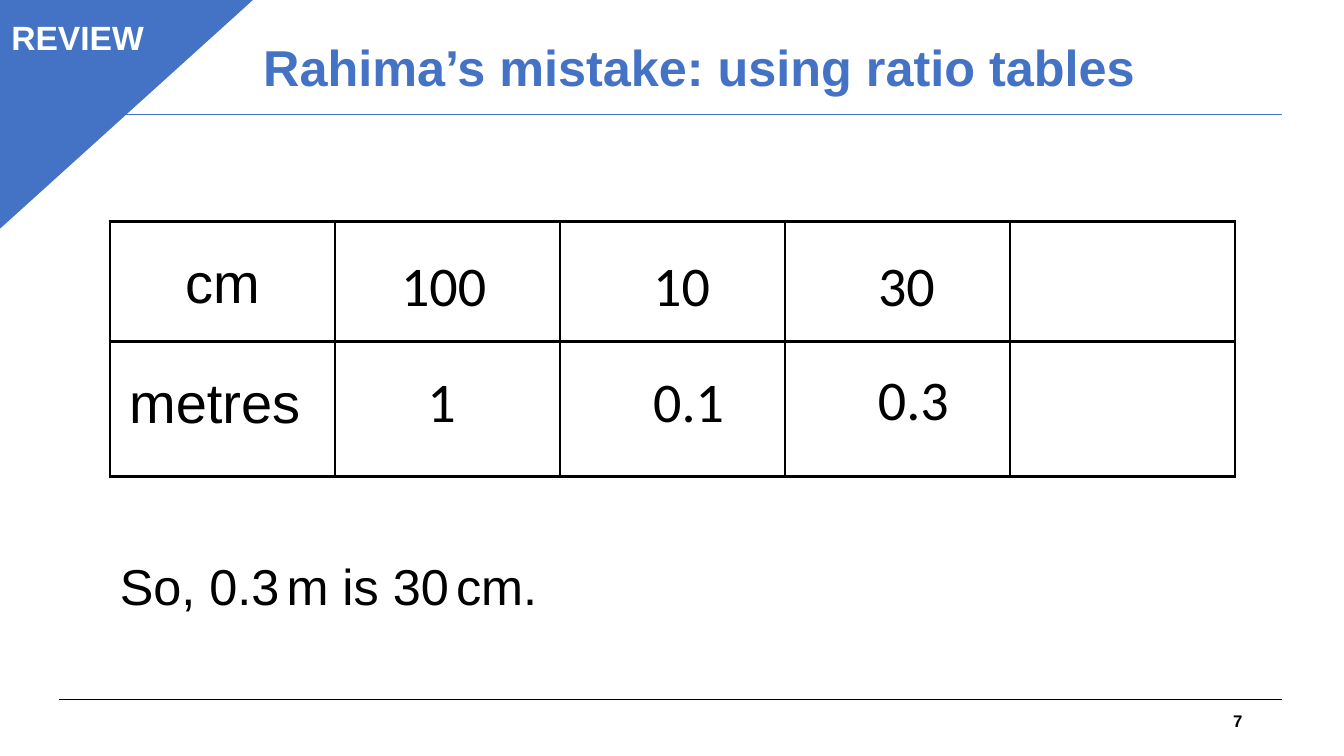
import pptx
import pptx.util
import pptx.dml.color
import pptx.enum.shapes
import pptx.enum.text
import pptx.oxml
import pptx.oxml.ns
from dataclasses import dataclass

Inches = pptx.util.Inches
Pt = pptx.util.Pt
Align = pptx.enum.text.PP_ALIGN
Anchor = pptx.enum.text.MSO_ANCHOR
Shape = pptx.enum.shapes.MSO_SHAPE


@dataclass(frozen=True)
class Theme:
    accent: str = "4472C4"
    ink: str = "000000"
    paper: str = "FFFFFF"
    text_font: str = "Arial"
    number_font: str = "Calibri"
    table_size: int = 40
    title_size: int = 36
    tag_size: int = 24
    gap_size: int = 18
    page_size: int = 12
    rule: float = 0.75
    border: float = 2.25


THEME = Theme()
TITLE = "Rahima’s mistake: using ratio tables"
TAG = "REVIEW"
PAGE = "7"
UNITS = ["cm", "metres "]
RATIOS = [
    ("100", 3.88, 2.44, 1.1),
    ("1", 4.14, 3.59, 0.58),
    ("10", 6.38, 2.44, 0.79),
    ("0.1", 6.38, 3.59, 0.95),
    ("30", 8.61, 2.44, 0.79),
    ("0.3", 8.61, 3.57, 1.07),
]
CONCLUSION = ["So, 0.3", "m is 30", "cm."]
TABLE_BOX = (1.09, 2.2, 11.16, 2.53)
ROW_HEIGHTS = [1.19, 1.34]
COLUMNS = 5
RULES = [(1.14, THEME.accent), (6.94, THEME.ink)]


def rgb(color):
    return pptx.dml.color.RGBColor.from_string(color)


def inches(box):
    return [Inches(v) for v in box]


def add_run(p, text, size, color=THEME.ink, font=THEME.text_font, bold=False):
    r = p.add_run()
    r.text = text
    r.font.size = Pt(size)
    r.font.name = font
    r.font.bold = bold
    r.font.color.rgb = rgb(color)


def add_text_box(s, box):
    tf = s.shapes.add_textbox(*inches(box)).text_frame
    tf.word_wrap = True
    return tf


def add_block(s, kind, box, width):
    sp = s.shapes.add_shape(kind, *inches(box))
    sp.shadow.inherit = False
    sp.fill.solid()
    sp.fill.fore_color.rgb = rgb(THEME.accent)
    sp.line.color.rgb = rgb(THEME.accent)
    sp.line.width = Pt(width)
    return sp


def add_rule(s, y, color):
    ln = s.shapes.add_connector(
        pptx.enum.shapes.MSO_CONNECTOR.STRAIGHT, *inches((0.59, y, 12.72, y)))
    ln.line.color.rgb = rgb(color)
    ln.line.width = Pt(THEME.rule)
    pptx.oxml.ns.qn("a:effectLst")
    ln._element.spPr.append(pptx.oxml.parse_xml(
        f'<a:effectLst {pptx.oxml.ns.nsdecls("a")}/>'))


def set_borders(cell):
    tc_pr = cell._tc.get_or_add_tcPr()
    for i, side in enumerate(("lnL", "lnR", "lnT", "lnB")):
        tc_pr.insert(i, pptx.oxml.parse_xml(
            f'<a:{side} {pptx.oxml.ns.nsdecls("a")} w="{Pt(THEME.border)}">'
            f'<a:solidFill><a:srgbClr val="{THEME.ink}"/></a:solidFill>'
            f'</a:{side}>'))


def add_ratio_table(s):
    table = s.shapes.add_table(
        len(UNITS), COLUMNS, *inches(TABLE_BOX)).table
    table.first_row = False
    table.horz_banding = False
    for column in table.columns:
        column.width = Inches(TABLE_BOX[2] / COLUMNS)
    for row, height in zip(table.rows, ROW_HEIGHTS):
        row.height = Inches(height)
    for cell in table.iter_cells():
        cell.fill.background()
        cell.margin_left = cell.margin_right = Inches(0.07)
        cell.margin_top = cell.margin_bottom = 0
        set_borders(cell)
    for i, unit in enumerate(UNITS):
        p = table.cell(i, 0).text_frame.paragraphs[0]
        p.alignment = Align.CENTER
        p.line_spacing = 1.5
        p.space_after = Pt(8)
        add_run(p, unit, THEME.table_size)


def add_title(s):
    sp = s.shapes.title
    sp.left, sp.top, sp.width, sp.height = inches((2.51, 0.14, 10, 1.11))
    tf = sp.text_frame
    tf.vertical_anchor = Anchor.MIDDLE
    p = tf.paragraphs[0]
    p.alignment = Align.LEFT
    p.line_spacing = 0.9
    add_run(p, TITLE, THEME.title_size, THEME.accent, bold=True)


def add_review_corner(s):
    corner = add_block(s, Shape.ISOSCELES_TRIANGLE, (0, -0.01, 2.51, 2.27), 1)
    corner.adjustments[0] = 0
    corner._element.spPr.xfrm.set("flipV", "1")
    tag = add_block(s, Shape.RECTANGLE, (0, 0.12, 1.54, 0.5), THEME.rule)
    tf = tag.text_frame
    tf.vertical_anchor = Anchor.TOP
    p = tf.paragraphs[0]
    p.alignment = Align.CENTER
    add_run(p, TAG, THEME.tag_size, THEME.paper, bold=True)


def main():
    prs = pptx.Presentation()
    prs.slide_width, prs.slide_height = Inches(13.33), Inches(7.5)
    s = prs.slides.add_slide(prs.slide_layouts[5])

    for y, color in RULES:
        add_rule(s, y, color)

    tf = add_text_box(s, (9.42, 6.95, 3, 0.4))
    tf.vertical_anchor = Anchor.MIDDLE
    p = tf.paragraphs[0]
    p.alignment = Align.RIGHT
    add_run(p, PAGE, THEME.page_size, bold=True)

    add_ratio_table(s)
    for text, x, y, width in RATIOS:
        tf = add_text_box(s, (x, y, width, 0.77))
        add_run(tf.paragraphs[0], text, THEME.table_size,
                font=THEME.number_font)

    p = add_text_box(s, (1.09, 5.46, 11.16, 0.71)).paragraphs[0]
    for i, part in enumerate(CONCLUSION):
        if i:
            add_run(p, " ", THEME.gap_size)
        add_run(p, part, THEME.title_size)

    add_review_corner(s)
    add_title(s)
    prs.save("out.pptx")


if __name__ == "__main__":
    main()
